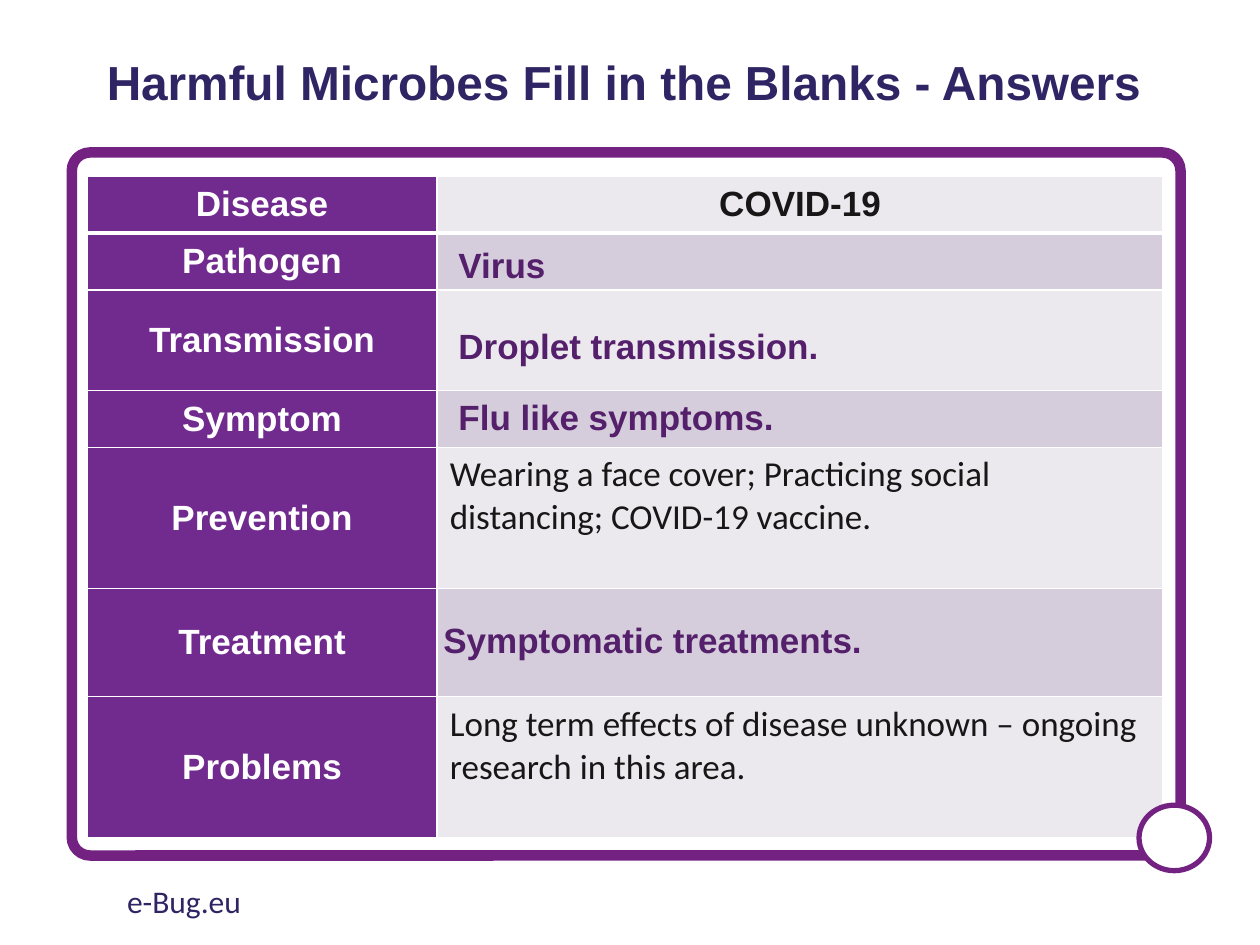
from lxml import etree
from pptx import Presentation
from pptx.dml.color import RGBColor
from pptx.enum import shapes, text
from pptx.oxml.ns import qn
from pptx.util import Inches, Pt

NAVY = RGBColor(0x30, 0x25, 0x64)
PLUM = RGBColor(0x73, 0x22, 0x81)
LABEL = RGBColor(0x71, 0x2B, 0x8F)
ANSWER = RGBColor(0x55, 0x20, 0x6B)
INK = RGBColor(0x18, 0x17, 0x17)
PALE = RGBColor(0xEB, 0xE8, 0xEE)
MAUVE = RGBColor(0xD5, 0xCD, 0xDB)
WHITE = RGBColor(0xFF, 0xFF, 0xFF)

HEAD = dict(name="Arial", size=Pt(20), bold=True)
BODY = dict(name="Calibri", size=Pt(20), bold=False)
MID, TOP = text.MSO_ANCHOR.MIDDLE, text.MSO_ANCHOR.TOP
CENTER, LEFT = text.PP_ALIGN.CENTER, text.PP_ALIGN.LEFT

ROWS = [
    ("Disease", 0.45, "COVID-19", HEAD, CENTER, MID),
    ("Pathogen", 0.45, "", HEAD, LEFT, MID),
    ("Transmission", 0.8, "", HEAD, LEFT, MID),
    ("Symptom", 0.45, "", HEAD, LEFT, MID),
    ("Prevention", 1.12, "Wearing a face cover; Practicing social distancing; "
     "COVID-19 vaccine.", BODY, LEFT, TOP),
    ("Treatment", 0.86, "", HEAD, LEFT, MID),
    ("Problems", 1.12, "Long term effects of disease unknown – ongoing "
     "research in this area.", BODY, LEFT, TOP),
]
NOTES = [("Virus", 2.85, 0.48), ("Droplet transmission.", 2.85, 1.13),
         ("Flu like symptoms.", 2.85, 1.69), ("Symptomatic treatments.", 2.73, 3.46)]


def write(frame, words, style, color, align=LEFT, anchor=TOP):
    """Put one styled paragraph in a text frame or cell."""
    frame.vertical_anchor = anchor
    para = getattr(frame, "text_frame", frame).paragraphs[0]
    para.alignment = align
    run = para.add_run()
    run.text = words
    for key, value in style.items():
        setattr(run.font, key, value)
    run.font.color.rgb = color
    return para


def label(slide, box, words, style, color, align=LEFT, anchor=TOP):
    """Add a wrapping text box."""
    frame = slide.shapes.add_textbox(*map(Inches, box)).text_frame
    frame.word_wrap = True
    return write(frame, words, style, color, align, anchor)


def edge(cell, base):
    """Draw white borders, with the bottom one of the given width."""
    props = cell._tc.get_or_add_tcPr()
    for side, width in dict(L=1, R=1, T=1, B=base).items():
        line = etree.SubElement(props, qn("a:ln" + side), w=str(Pt(width)))
        fill = etree.SubElement(line, qn("a:solidFill"))
        etree.SubElement(fill, qn("a:srgbClr"), val=str(WHITE))


def paint(cell, color, base):
    """Give a cell its borders and fill."""
    edge(cell, base)
    cell.fill.solid()
    cell.fill.fore_color.rgb = color


def grid(slide, box):
    """Build the table of answers and the notes laid over it."""
    left, top, wide, high = box
    table = slide.shapes.add_table(len(ROWS), 2, *map(Inches, box)).table
    table.columns[0].width = Inches(2.78)
    table.columns[1].width = Inches(wide - 2.78)
    for i, (name, tall, words, style, align, anchor) in enumerate(ROWS):
        table.rows[i].height = Inches(tall)
        first, second = table.cell(i, 0), table.cell(i, 1)
        base = 1 if i else 3
        paint(first, LABEL, base)
        paint(second, MAUVE if i % 2 else PALE, base)
        write(first, name, HEAD, WHITE, CENTER, MID)
        if words:
            write(second, words, style, INK, align, anchor)
    for words, x, y in NOTES:
        label(slide, (left + x, top + y, 5.3, 0.44), words, HEAD, ANSWER)


def outline(slide, kind, box, width):
    """Add a plum outlined shape without fill."""
    shape = slide.shapes.add_shape(kind, *map(Inches, box))
    shape.shadow.inherit = False
    shape.fill.background()
    shape.line.color.rgb = PLUM
    shape.line.width = Pt(width)
    return shape


def border(slide, box):
    """Draw the rounded frame with a circle at its lower right corner."""
    left, top, wide, high = box
    kind = shapes.MSO_SHAPE
    outline(slide, kind.ROUNDED_RECTANGLE, box, 6).adjustments[0] = 0.026
    spot = (left + wide - 0.33, top + high - 0.4, 0.56, 0.52)
    dot = outline(slide, kind.OVAL, spot, 3)
    dot.fill.solid()
    dot.fill.fore_color.rgb = WHITE


def main():
    """Build and save the slide."""
    deck = Presentation()
    deck.slide_width, deck.slide_height = Inches(10), Inches(7.5)
    slide = deck.slides.add_slide(deck.slide_layouts[6])
    title = label(slide, (0.64, 0.2, 8.62, 0.95),
                  "Harmful Microbes Fill in the Blanks - Answers",
                  dict(HEAD, size=Pt(27.3)), NAVY, CENTER, MID)
    title.line_spacing = 0.9
    grid(slide, (0.69, 1.4, 8.54, 5.24))
    border(slide, (0.57, 1.21, 8.8, 5.58))
    label(slide, (0.91, 6.95, 3.38, 0.4), "e-Bug.eu",
          dict(BODY, size=Pt(18)), NAVY)
    deck.save("out.pptx")


if __name__ == "__main__":
    main()
